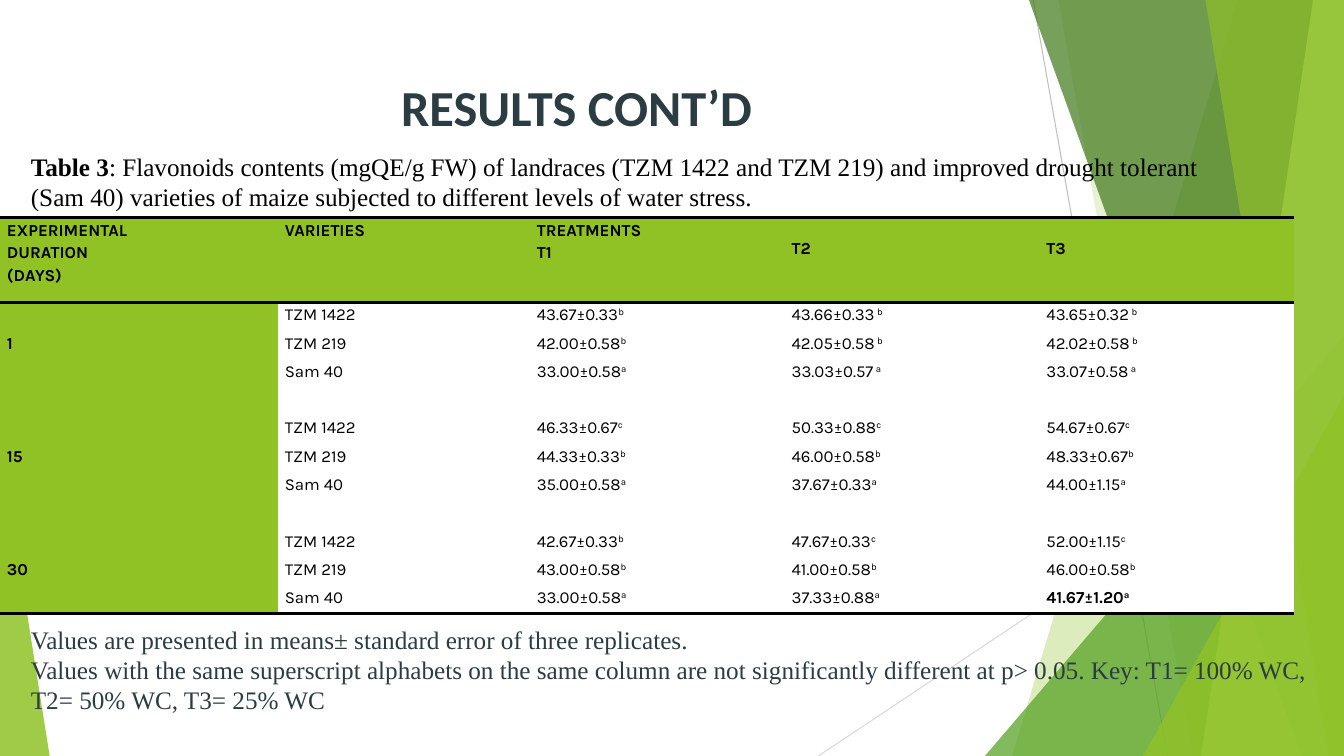
from lxml.etree import SubElement
from pptx import Presentation
from pptx.dml.color import RGBColor
from pptx.enum.shapes import MSO_CONNECTOR, MSO_SHAPE
from pptx.enum.text import MSO_ANCHOR, PP_ALIGN
from pptx.oxml.ns import qn
from pptx.util import Pt

GREEN, SLATE, BLACK, WHITE = "90C226", "2C3C43", "000000", "FFFFFF"
TITLE = {"name": "Calibri", "size": Pt(36), "bold": True}
PROSE = {"name": "Times New Roman", "size": Pt(18), "bold": False}
CELL = {"name": "Karla", "size": Pt(12), "bold": False}
STRONG = {"bold": True}
JUSTIFIED = {"alignment": PP_ALIGN.JUSTIFY, "line_spacing": 1.15}
NO_GRID = "{2D5ABB26-0587-4C30-8999-92F81FD0307C}"

WIDTH, HEIGHT = 960, 540
HEADER = ["EXPERIMENTAL\nDURATION\n(DAYS)", "VARIETIES", "TREATMENTS\nT1", "T2", "T3"]
VARIETIES = ["TZM 1422", "TZM 219", "Sam 40"]
MEANS = {
    "1": [["43.67±0.33^b", "43.66±0.33^ b", "43.65±0.32^ b"],
          ["42.00±0.58^b", "42.05±0.58^ b", "42.02±0.58^ b"],
          ["33.00±0.58^a", "33.03±0.57^ a", "33.07±0.58^ a"]],
    "15": [["46.33±0.67^c", "50.33±0.88^c", "54.67±0.67^c"],
           ["44.33±0.33^b", "46.00±0.58^b", "48.33±0.67^b"],
           ["35.00±0.58^a", "37.67±0.33^a", "44.00±1.15^a"]],
    "30": [["42.67±0.33^b", "47.67±0.33^c", "52.00±1.15^c"],
           ["43.00±0.58^b", "41.00±0.58^b", "46.00±0.58^b"],
           ["33.00±0.58^a", "37.33±0.88^a", "41.67±1.20^a"]],
}


def apply(target, values):
    for name, value in values.items():
        setattr(target, name, value)


def paint(fill, color):
    fill.solid()
    fill.fore_color.rgb = RGBColor.from_string(color)


class Deck:
    """Holds the presentation style and the current slide."""

    def __init__(self):
        self.prs = Presentation()
        apply(self.prs, {"slide_width": Pt(WIDTH), "slide_height": Pt(HEIGHT)})
        self.s = self.prs.slides.add_slide(self.prs.slide_layouts[5])

    def run(self, p, text, fmt, color, raised=False):
        r = p.add_run()
        r.text = text
        apply(r.font, fmt)
        paint(r.font.fill, color)
        if raised:
            r._r.get_or_add_rPr().set("baseline", "30000")

    def finish(self, sp, color, alpha):
        sp.shadow.inherit = False
        sp.line.fill.background()
        paint(sp.fill, color)
        clr = sp._element.spPr.find(qn("a:solidFill"))[0]
        SubElement(clr, qn("a:alpha")).set("val", str(alpha * 1000))

    def line(self, x1, y1, x2, y2, color):
        c = self.s.shapes.add_connector(
            MSO_CONNECTOR.STRAIGHT, Pt(x1), Pt(y1), Pt(x2), Pt(y2))
        paint(c.line.fill, color)
        c.line.width = Pt(0.75)
        SubElement(c._element.spPr, qn("a:effectLst"))

    def band(self, top_x, bottom_x, color, alpha):
        fb = self.s.shapes.build_freeform(Pt(top_x), 0)
        fb.add_line_segments([(Pt(WIDTH), 0), (Pt(WIDTH), Pt(HEIGHT)),
                              (Pt(bottom_x), Pt(HEIGHT))], close=True)
        self.finish(fb.convert_to_shape(), color, alpha)

    def triangle(self, x, y, w, apex, color, alpha):
        sp = self.s.shapes.add_shape(
            MSO_SHAPE.ISOSCELES_TRIANGLE, Pt(x), Pt(y), Pt(w), Pt(HEIGHT - y))
        sp.adjustments[0] = apex
        self.finish(sp, color, alpha)

    def title(self, text, x, y, w, h):
        sp = self.s.shapes.title
        apply(sp, {"left": Pt(x), "top": Pt(y), "width": Pt(w), "height": Pt(h)})
        tf = sp.text_frame
        apply(tf, {"word_wrap": True, "vertical_anchor": MSO_ANCHOR.MIDDLE,
                   "margin_left": Pt(47)})
        p = tf.paragraphs[0]
        p.alignment = PP_ALIGN.CENTER
        self.run(p, text, TITLE, SLATE)
        self.s.shapes._spTree.append(sp._element)

    def text(self, x, y, w, h, color, paragraphs):
        tf = self.s.shapes.add_textbox(Pt(x), Pt(y), Pt(w), Pt(h)).text_frame
        tf.word_wrap = True
        for i, (layout, runs) in enumerate(paragraphs):
            p = tf.add_paragraph() if i else tf.paragraphs[0]
            apply(p, layout)
            for text, fmt in runs:
                self.run(p, text, PROSE | fmt, color)

    def cell(self, cell, text, fmt, fill, edges, top=0):
        apply(cell, {"margin_left": Pt(5), "margin_right": Pt(5),
                     "margin_top": Pt(top), "margin_bottom": 0})
        paint(cell.fill, fill)
        tf = cell.text_frame
        for i, line in enumerate(text.split("\n")):
            p = tf.add_paragraph() if i else tf.paragraphs[0]
            apply(p, JUSTIFIED)
            value, mark, letter = line.partition("^")
            self.run(p, value, CELL | fmt, BLACK)
            if mark:
                self.run(p, letter, CELL | fmt, BLACK, raised=True)
        tcPr = cell._tc.get_or_add_tcPr()
        for i, edge in enumerate(edges):
            ln = SubElement(tcPr, qn("a:ln" + edge), w=str(Pt(2)))
            solid = SubElement(ln, qn("a:solidFill"))
            SubElement(solid, qn("a:srgbClr"), val=BLACK)
            tcPr.insert(i, ln)

    def table(self, x, y, widths, heights, rows):
        table = self.s.shapes.add_table(
            len(rows), len(widths), Pt(x), Pt(y),
            Pt(sum(widths)), Pt(sum(heights))).table
        table._tbl.tblPr.find(qn("a:tableStyleId")).text = NO_GRID
        apply(table, {"first_row": False, "horz_banding": False})
        for column, width in zip(table.columns, widths):
            column.width = Pt(width)
        last = len(rows) - 1
        for i, row in enumerate(rows):
            table.rows[i].height = Pt(heights[i])
            edges = {0: "TB", last: "B"}.get(i, "")
            for j, text in enumerate(row):
                head = i == 0 or j == 0
                strong = head or (i, j) == (last, len(row) - 1)
                self.cell(table.cell(i, j), text, STRONG if strong else {},
                          GREEN if head else WHITE, edges,
                          top=13 if i == 0 and j > 2 else 0)


def result_rows():
    rows = [HEADER]
    for days, block in MEANS.items():
        if len(rows) > 1:
            rows.append([""] * len(HEADER))
        for i, (variety, means) in enumerate(zip(VARIETIES, block)):
            rows.append([days if i == 1 else "", variety, *means])
    return rows


def main():
    deck = Deck()
    deck.line(738, 0, 834, HEIGHT, "BFBFBF")
    deck.line(WIDTH, 290, 584.5, HEIGHT, "D9D9D9")
    deck.band(884, 723, GREEN, 30)
    deck.band(756, 852, GREEN, 20)
    deck.triangle(703.5, 240, 256.5, 1, "54A021", 72)
    deck.band(735, 930, "3F7819", 70)
    deck.band(938, 858, "C0E474", 70)
    deck.band(861, 949, GREEN, 65)
    deck.triangle(816.5, 283, 143.5, 1, GREEN, 80)
    deck.triangle(0, 316, 35.5, 0, GREEN, 85)
    deck.title("RESULTS CONT’D", 53.5, 48, 677, 56)
    rows = result_rows()
    deck.table(0, 155.5, [198.5, 180, 182, 182, 182],
               [60.5] + [20.23] * (len(rows) - 1), rows)
    deck.text(15, 104.5, 883, 51, BLACK, [({}, [
        ("Table 3", STRONG),
        (": Flavonoids contents (mgQE/g FW) of landraces (TZM 1422 and TZM 219) "
         "and improved drought tolerant (Sam 40) varieties of maize subjected "
         "to different levels of water stress.", {})])])
    deck.text(15, 439, 935.5, 76.5, SLATE, [
        (JUSTIFIED, [("Values are presented in means± standard error of "
                      "three replicates.", {})]),
        ({}, [("Values with the same superscript alphabets on the same column are "
               "not significantly different at p> 0.05. Key: T1= 100% WC, "
               "T2= 50% WC, T3= 25% WC", {})])])
    deck.prs.save("out.pptx")


if __name__ == "__main__":
    main()
